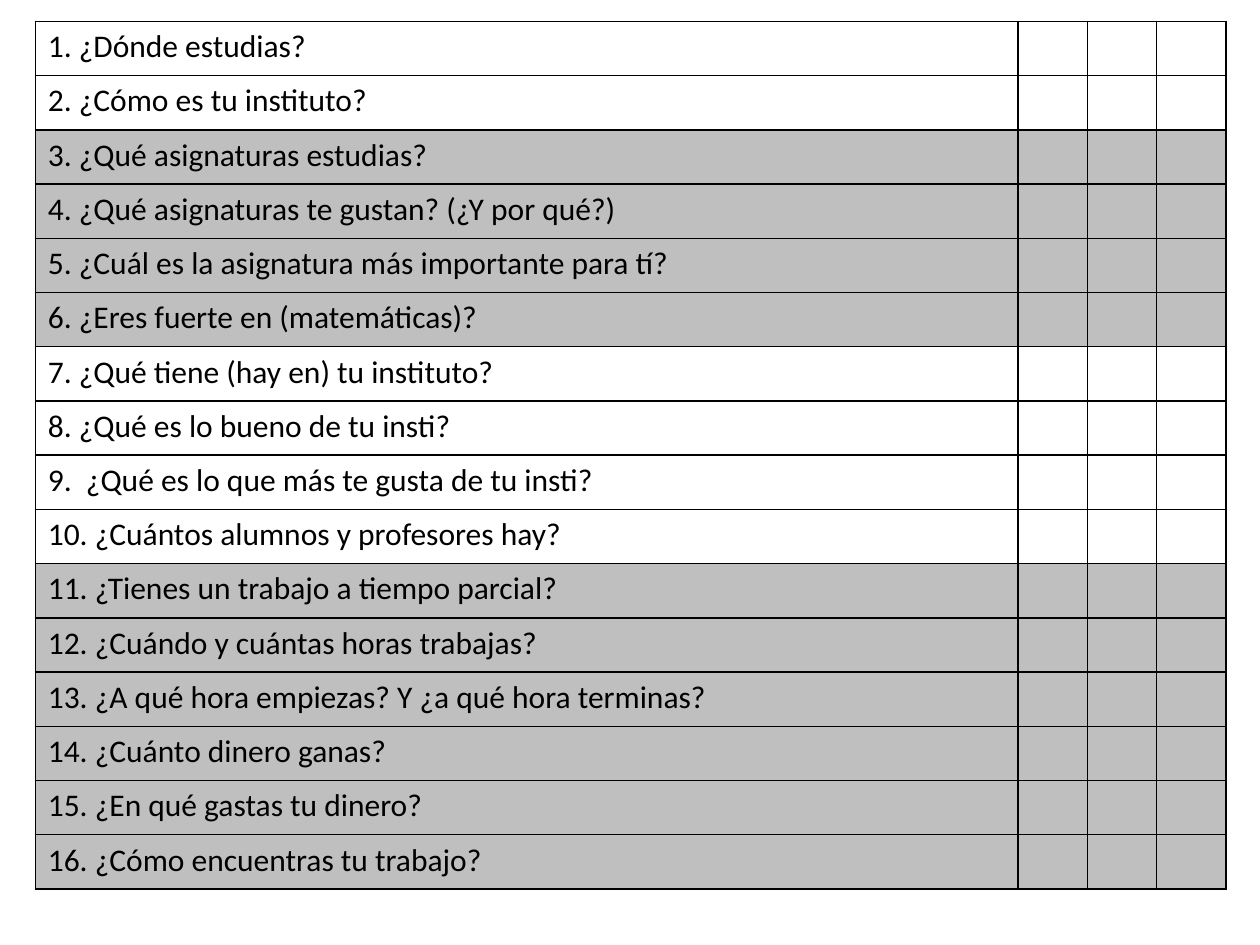
"""Build a slide with a speaking checklist of Spanish questions about school and work."""
from dataclasses import dataclass

from lxml.etree import SubElement
from pptx import Presentation
from pptx.dml.color import RGBColor
from pptx.oxml.ns import qn
from pptx.util import Inches, Pt

QUESTION_GROUPS = [
    ("plain", ["1. ¿Dónde estudias?", "2. ¿Cómo es tu instituto?"]),
    ("shaded", [
        "3. ¿Qué asignaturas estudias?",
        "4. ¿Qué asignaturas te gustan? (¿Y por qué?)",
        "5. ¿Cuál es la asignatura más importante para tí?",
        "6. ¿Eres fuerte en (matemáticas)?",
    ]),
    ("plain", [
        "7. ¿Qué tiene (hay en) tu instituto?",
        "8. ¿Qué es lo bueno de tu insti?",
        "9.  ¿Qué es lo que más te gusta de tu insti?",
        "10. ¿Cuántos alumnos y profesores hay?",
    ]),
    ("shaded", [
        "11. ¿Tienes un trabajo a tiempo parcial?",
        "12. ¿Cuándo y cuántas horas trabajas?",
        "13. ¿A qué hora empiezas? Y ¿a qué hora terminas?",
        "14. ¿Cuánto dinero ganas?",
        "15. ¿En qué gastas tu dinero?",
        "16. ¿Cómo encuentras tu trabajo?",
    ]),
]
SLIDE_WIDTH, SLIDE_HEIGHT = Inches(10), Inches(7.5)
LEFT, TOP, WIDTH, HEIGHT = Inches(0.28), Inches(0.17), Inches(9.45), Inches(6.89)
CHECK_COLUMNS, CHECK_WIDTH = 3, Inches(0.55)


@dataclass(frozen=True)
class Theme:
    font: str = "Calibri"
    size: int = 18
    ink: str = "000000"
    shade: str = "BFBFBF"
    border: int = 1


THEME = Theme()


def add_borders(cell):
    properties = cell._tc.get_or_add_tcPr()
    for position, side in enumerate(("lnL", "lnR", "lnT", "lnB")):
        line = properties.makeelement(qn(f"a:{side}"), {"w": str(Pt(THEME.border))})
        fill = SubElement(line, qn("a:solidFill"))
        SubElement(fill, qn("a:srgbClr"), val=THEME.ink)
        properties.insert(position, line)


def format_cell(cell, style, text):
    if style == "shaded":
        cell.fill.solid()
        cell.fill.fore_color.rgb = RGBColor.from_string(THEME.shade)
    else:
        cell.fill.background()
    add_borders(cell)
    cell.text = text
    font = cell.text_frame.paragraphs[0].font
    for name, value in {"name": THEME.font, "size": Pt(THEME.size), "bold": False}.items():
        setattr(font, name, value)
    font.color.rgb = RGBColor.from_string(THEME.ink)


def add_checklist(slide):
    rows = [(style, text) for style, questions in QUESTION_GROUPS for text in questions]
    table = slide.shapes.add_table(
        len(rows), 1 + CHECK_COLUMNS, LEFT, TOP, WIDTH, HEIGHT
    ).table
    for name, value in {"first_row": False, "horz_banding": False}.items():
        setattr(table, name, value)
    widths = [WIDTH - CHECK_COLUMNS * CHECK_WIDTH] + [CHECK_WIDTH] * CHECK_COLUMNS
    for column, width in zip(table.columns, widths):
        column.width = width
    for row, (style, question) in zip(table.rows, rows):
        row.height = HEIGHT // len(rows)
        for cell, text in zip(row.cells, [question] + [""] * CHECK_COLUMNS):
            format_cell(cell, style, text)


def main():
    presentation = Presentation()
    presentation.slide_width, presentation.slide_height = SLIDE_WIDTH, SLIDE_HEIGHT
    slide = presentation.slides.add_slide(presentation.slide_layouts[6])
    add_checklist(slide)
    presentation.save("out.pptx")


if __name__ == "__main__":
    main()
